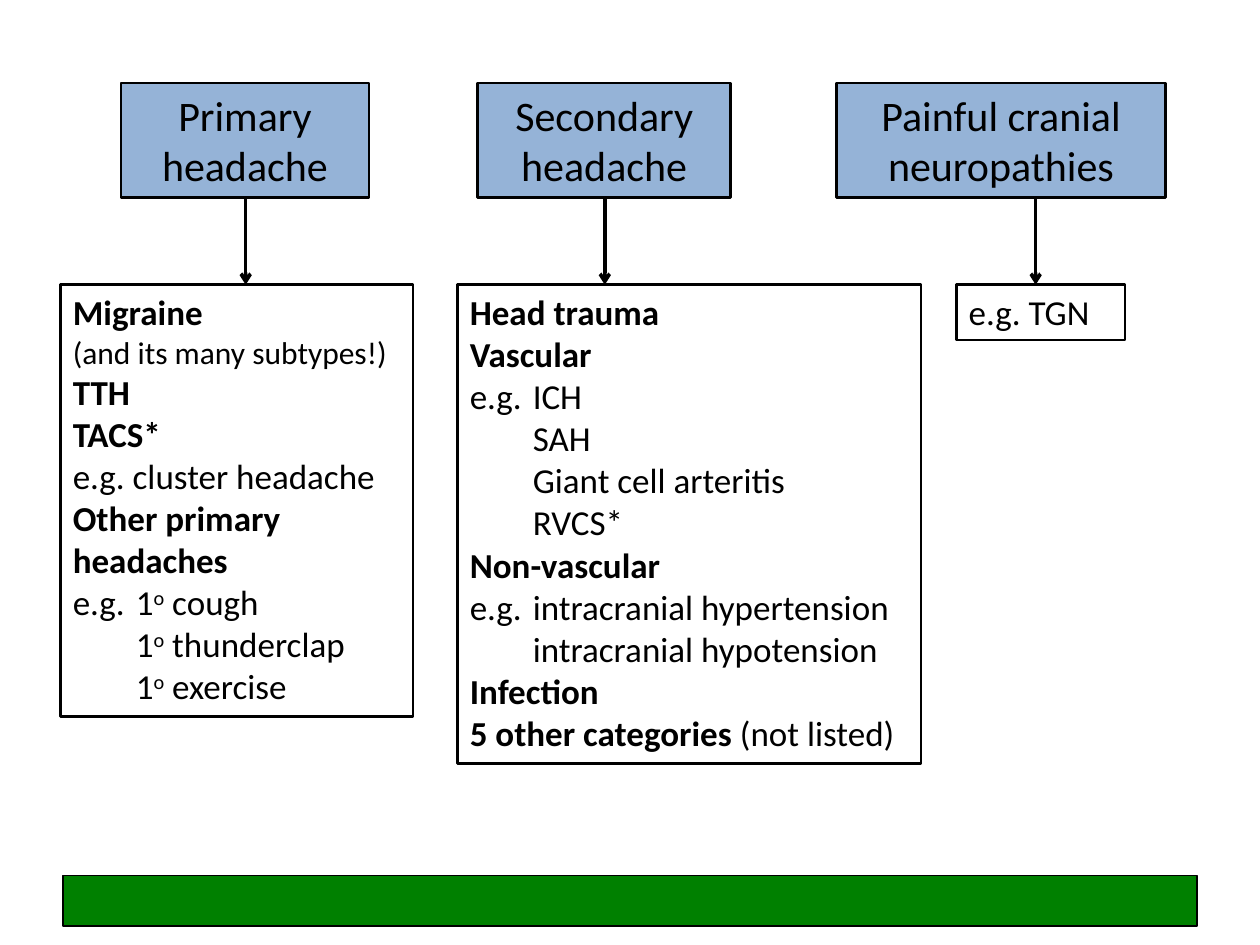
from lxml import etree
from pptx import Presentation
from pptx.dml.color import RGBColor
from pptx.enum.shapes import MSO_CONNECTOR, MSO_SHAPE
from pptx.enum.text import MSO_ANCHOR, MSO_AUTO_SIZE, PP_ALIGN
from pptx.oxml.ns import qn
from pptx.util import Inches, Pt

RECT = MSO_SHAPE.RECTANGLE
LINE = MSO_CONNECTOR.STRAIGHT
TOP = MSO_ANCHOR.TOP
FIT = MSO_AUTO_SIZE.SHAPE_TO_FIT_TEXT
LEFT, MID = PP_ALIGN.LEFT, PP_ALIGN.CENTER

BLACK = RGBColor(0x00, 0x00, 0x00)
BLUE = RGBColor(0x95, 0xB3, 0xD7)
GREEN = RGBColor(0x00, 0x80, 0x00)

FONT = "Calibri"
UNIT = Inches(0.1)
TAB = Inches(0.5)
HEAD_Y, HEAD_H = 6.6, 9.1
LIST_Y = 22.6


def bold(text):
    """Return a line with one bold run."""
    return [(text, "bold")]


def plain(text):
    """Return a line with one plain run."""
    return [(text, "")]


def first(lead, name):
    """Return a line for a primary disorder, with a raised degree mark."""
    return [(lead + "\t1", ""), ("o", "super"), (" " + name, "")]


PRIMARY = [
    bold("Migraine"),
    [("(and its many subtypes!)", "small")],
    bold("TTH"),
    bold("TACS*"),
    plain("e.g. cluster headache"),
    bold("Other primary headaches"),
    first("e.g.", "cough"),
    first("", "thunderclap"),
    first("", "exercise"),
]
SECOND = [
    bold("Head trauma"),
    bold("Vascular"),
    plain("e.g.\tICH"),
    plain("\tSAH"),
    plain("\tGiant cell arteritis"),
    plain("\tRVCS*"),
    bold("Non-vascular"),
    plain("e.g.\tintracranial hypertension"),
    plain("\tintracranial hypotension"),
    bold("Infection"),
    [("5 other categories ", "bold"), ("(not listed)", "")],
]
GROUPS = [
    (["Primary", "headache"], (9.6, 19.7), 19.5, PRIMARY, (4.8, 28, 34.3)),
    (["Secondary headache"], (37.9, 20.1), 48, SECOND, (36.3, 36.8, 38)),
    (["Painful cranial neuropathies"], (66.4, 26.1), 82.2,
     [plain("e.g. TGN")], (75.9, 13.4, 4.4)),
]


def draw_box(slide, box, fill=None, width=1.5):
    """Add a black-edged rectangle at a box of grid units."""
    shape = slide.shapes.add_shape(RECT, *[int(n * UNIT) for n in box])
    shape.shadow.inherit = False
    if fill is None:
        shape.fill.background()
    else:
        shape.fill.solid()
        shape.fill.fore_color.rgb = fill
    shape.line.color.rgb = BLACK
    shape.line.width = Pt(width)
    return shape


def set_tab(para):
    """Give a paragraph its left tab stop."""
    stops = etree.SubElement(para._p.get_or_add_pPr(), qn("a:tabLst"))
    etree.SubElement(stops, qn("a:tab"), pos=str(int(TAB)), algn="l")


def fill_text(shape, lines, size, align):
    """Write lines of styled runs into a shape."""
    frame = shape.text_frame
    frame.word_wrap = True
    frame.auto_size = FIT
    frame.vertical_anchor = TOP
    for i, line in enumerate(lines):
        para = frame.add_paragraph() if i else frame.paragraphs[0]
        para.alignment = align
        if any("\t" in text for text, style in line):
            set_tab(para)
        for text, style in line:
            run = para.add_run()
            run.text = text
            font = run.font
            font.name = FONT
            font.size = Pt(18 if style == "small" else size)
            font.bold = style == "bold"
            font.color.rgb = BLACK
            if style == "super":
                font._element.set("baseline", "30000")


def draw_arrow(slide, x, top, end):
    """Draw a downward arrow between two rows."""
    ends = [int(n * UNIT) for n in (x, top, x, end)]
    arrow = slide.shapes.add_connector(LINE, *ends)
    arrow.line.color.rgb = BLACK
    arrow.line.width = Pt(2)
    etree.SubElement(arrow.line._get_or_add_ln(), qn("a:tailEnd"), type="arrow")
    etree.SubElement(arrow._element.spPr, qn("a:effectLst"))


def draw_group(slide, title, span, x, lines, place):
    """Draw a heading, its arrow and the list below."""
    left, width = span
    head = draw_box(slide, (left, HEAD_Y, width, HEAD_H), BLUE)
    fill_text(head, [plain(text) for text in title], 24, MID)
    draw_arrow(slide, x, HEAD_Y + HEAD_H, LIST_Y)
    side, wide, high = place
    body = draw_box(slide, (side, LIST_Y, wide, high))
    fill_text(body, lines, 20, LEFT)


def main():
    """Build and save the slide."""
    deck = Presentation()
    deck.slide_width, deck.slide_height = Inches(10), Inches(7.5)
    slide = deck.slides.add_slide(deck.slide_layouts[6])
    draw_box(slide, (5, 69.5, 90, 4), GREEN, 0.75)
    for group in GROUPS:
        draw_group(slide, *group)
    deck.save("out.pptx")


if __name__ == "__main__":
    main()
